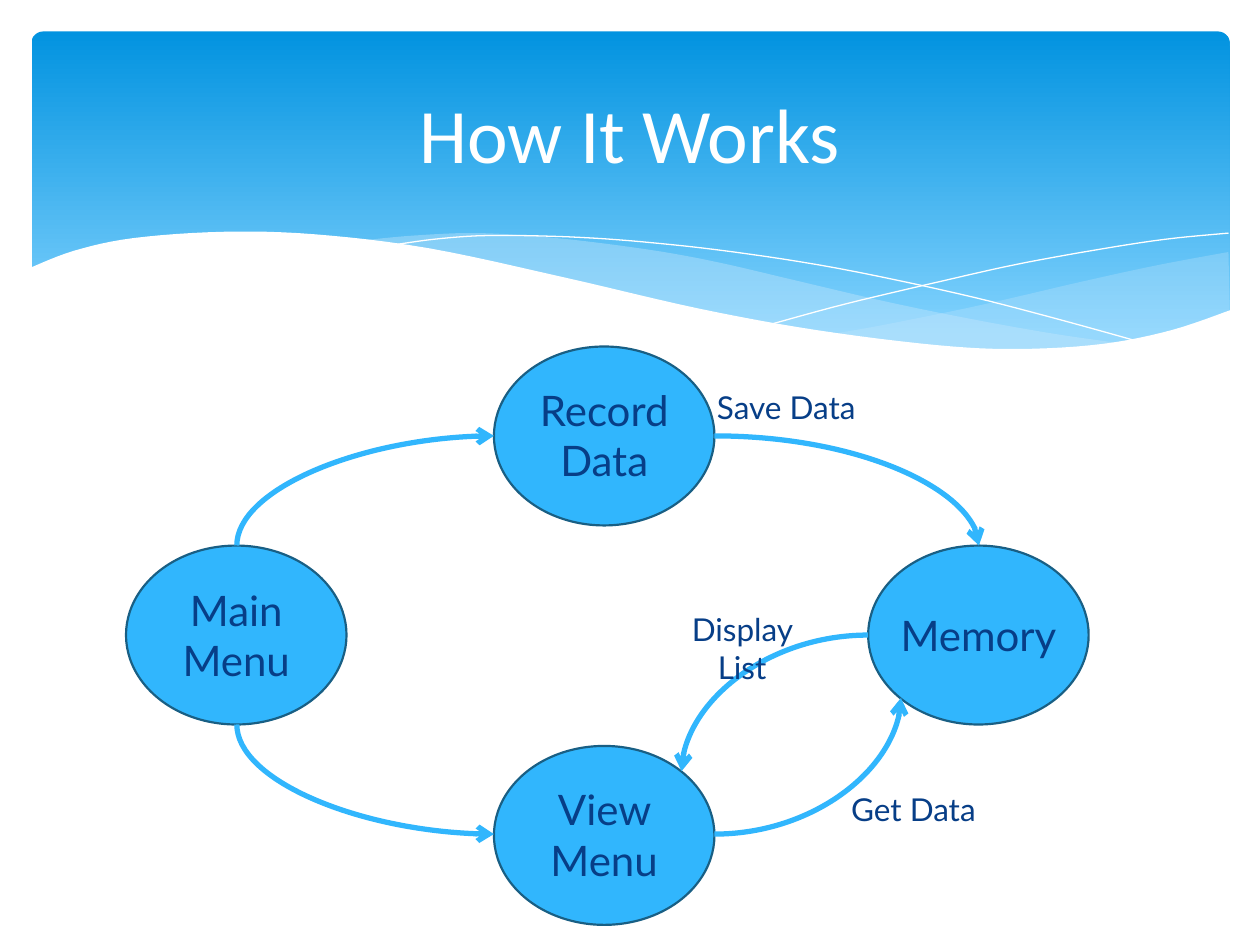
"""Build the "How It Works" slide: a wave banner above a four-node flow."""
from dataclasses import dataclass

from lxml import etree
from pptx import Presentation
from pptx.dml.color import RGBColor
from pptx.enum.shapes import MSO_CONNECTOR, MSO_SHAPE
from pptx.enum.text import MSO_ANCHOR, MSO_AUTO_SIZE, PP_ALIGN
from pptx.oxml.ns import qn
from pptx.util import Pt

PX = 9144
CURVE = MSO_CONNECTOR.CURVE
OVAL, ROUND_RECT = MSO_SHAPE.OVAL, MSO_SHAPE.ROUNDED_RECTANGLE
CENTER, TOP, MIDDLE = PP_ALIGN.CENTER, MSO_ANCHOR.TOP, MSO_ANCHOR.MIDDLE
GROW, FIXED = MSO_AUTO_SIZE.SHAPE_TO_FIT_TEXT, MSO_AUTO_SIZE.NONE


@dataclass(frozen=True)
class Theme:
    white: str = "FFFFFF"
    banner_top: str = "0293E0"
    banner_bottom: str = "83D3FE"
    wave: str = "C6E7FC"
    node: str = "31B6FD"
    node_line: str = "195F84"
    ink: str = "073E87"
    title_font: str = "Calibri"
    body_font: str = "Lato"
    title_size: int = 44
    node_size: int = 24
    label_size: int = 18


T = Theme()
SLIDE = (1000, 750)
BANNER = (25, 25, 951, 270)
TITLE = ("How It Works", (50, 37, 900, 137))

RIGHT_WAVE = [
    [(975, 200), (921, 210), (861, 223), (779, 242), (706, 257), (661, 265)],
    [(661, 265), (705, 271), (757, 276), (803, 278), (854, 276), (897, 270), (942, 259), (976, 247)],
]
LEFT_WAVE = [
    [(893, 273), (837, 265), (775, 254), (706, 240), (629, 222), (569, 208), (514, 198),
     (442, 189), (380, 185), (328, 187), (286, 191)],
    [(286, 191), (342, 199), (404, 211), (449, 222), (530, 240), (601, 255), (665, 266),
     (722, 274), (773, 277), (828, 278), (876, 275), (893, 273)],
]
FALLING_LINE = [[(309, 195), (344, 190), (387, 187), (450, 188), (510, 192), (582, 200),
                 (665, 213), (760, 233), (831, 251), (907, 272)]]
RISING_LINE = [[(613, 257), (672, 241), (748, 223), (806, 210), (866, 199), (924, 190), (975, 185)]]
FRONT_WAVE = [
    [(23, 213), (59, 199), (106, 189), (177, 184), (250, 186), (340, 197), (447, 220), (555, 245),
     (648, 262), (744, 274), (809, 277), (875, 273), (930, 262), (977, 246)],
    [(977, 329), (23, 329)],
]
WAVES = [
    (RIGHT_WAVE, dict(fill=T.wave, opacity=29)),
    (LEFT_WAVE, dict(fill=T.wave, opacity=40)),
    (FALLING_LINE, dict(line=T.white)),
    (RISING_LINE, dict(line=T.white)),
    (FRONT_WAVE, dict(fill=T.white)),
]

NODE_W, NODE_H = 175, 142
NODES = [
    ("Main Menu", (100, 433), (129, 459, 117, 91)),
    ("Memory", (689, 433), (692, 479, 169, 50)),
    ("Record Data", (392, 275), (415, 300, 129, 91)),
    ("View Menu", (392, 592), (421, 617, 117, 91)),
]
ARROWS = [
    ((188, 433), (392, 346), "vertical"),
    ((567, 346), (777, 433), "horizontal"),
    ((188, 575), (392, 662), "vertical"),
    ((689, 504), (541, 612), "horizontal"),
    ((567, 662), (715, 554), "horizontal"),
]
LABELS = [
    ("Get Data", (661, 622, 128, 40)),
    ("Display List", (517, 479, 144, 40)),
    ("Save Data", (555, 303, 138, 40)),
]


def emu(values):
    return [round(v * PX) for v in values]


def rgb(color):
    return RGBColor.from_string(color)


def smooth(knots, steps=6):
    """Return Catmull-Rom points through the knots."""
    k = [knots[0], *knots, knots[-1]]
    points = [knots[0]]
    for a, b, c, d in zip(k, k[1:], k[2:], k[3:]):
        for t in (i / steps for i in range(1, steps + 1)):
            points.append(tuple(
                (2 * q + (r - p) * t + (2 * p - 5 * q + 4 * r - s) * t ** 2
                 + (3 * q - p - 3 * r + s) * t ** 3) / 2
                for p, q, r, s in zip(a, b, c, d)))
    return points


def style(sp, fill=None, line=None, width=0, opacity=100):
    sp.shadow.inherit = False
    if fill:
        sp.fill.solid()
        sp.fill.fore_color.rgb = rgb(fill)
    else:
        sp.fill.background()
    if opacity < 100:
        color = sp._element.spPr.find(qn("a:solidFill")).find(qn("a:srgbClr"))
        etree.SubElement(color, qn("a:alpha"), val=str(opacity * 1000))
    if line:
        sp.line.color.rgb = rgb(line)
        sp.line.width = Pt(width)
    else:
        sp.line.fill.background()


def add_banner(s):
    sp = s.shapes.add_shape(ROUND_RECT, *emu(BANNER))
    style(sp)
    sp.adjustments[0] = 0.034
    sp.fill.gradient()
    sp.fill.gradient_angle = 270
    stops = zip(sp.fill.gradient_stops, [(0, T.banner_top), (0.9, T.banner_bottom)])
    for stop, (position, color) in stops:
        stop.position = position
        stop.color.rgb = rgb(color)


def add_wave(s, edges, **look):
    points = [emu(p) for edge in edges for p in smooth(edge)]
    fb = s.shapes.build_freeform(*points[0], scale=1.0)
    fb.add_line_segments(points[1:], close="fill" in look)
    style(fb.convert_to_shape(), **look)


def add_text(s, text, box, size, font=T.body_font, color=T.ink, anchor=TOP, fit=GROW):
    tf = s.shapes.add_textbox(*emu(box)).text_frame
    tf.word_wrap, tf.auto_size, tf.vertical_anchor = True, fit, anchor
    p = tf.paragraphs[0]
    p.alignment = CENTER
    r = p.add_run()
    r.text = text
    r.font.name, r.font.size, r.font.color.rgb = font, Pt(size), rgb(color)


def add_arrow(s, start, end, leaves):
    (x1, y1), (x2, y2) = start, end
    turn = 0
    if leaves == "vertical":
        cx, cy = (x1 + x2) / 2, (y1 + y2) / 2
        dx, dy = abs(y2 - y1) / 2, (y2 - y1) / abs(y2 - y1) * abs(x2 - x1) / 2
        turn = 90 if y2 < y1 else 270
        x1, x2 = cx + dx, cx - dx
        y1, y2 = (cy + dy, cy - dy) if turn == 270 and dy < 0 else (cy - dy, cy + dy)
    cxn = s.shapes.add_connector(CURVE, *emu((x1, y1, x2, y2)))
    cxn.line.color.rgb = rgb(T.node)
    cxn.line.width = Pt(3)
    sp_pr = cxn._element.spPr
    sp_pr.find(qn("a:prstGeom")).set("prst", "curvedConnector2")
    if turn:
        sp_pr.find(qn("a:xfrm")).set("rot", str(turn * 60000))
    etree.SubElement(sp_pr.find(qn("a:ln")), qn("a:tailEnd"), type="arrow")
    etree.SubElement(sp_pr, qn("a:effectLst"))


def main():
    prs = Presentation()
    prs.slide_width, prs.slide_height = emu(SLIDE)
    s = prs.slides.add_slide(prs.slide_layouts[6])
    add_banner(s)
    for edges, look in WAVES:
        add_wave(s, edges, **look)
    add_text(s, *TITLE, T.title_size, font=T.title_font, color=T.white, anchor=MIDDLE, fit=FIXED)
    for _, corner, _ in NODES:
        sp = s.shapes.add_shape(OVAL, *emu((*corner, NODE_W, NODE_H)))
        style(sp, fill=T.node, line=T.node_line, width=1.25)
    for arrow in ARROWS:
        add_arrow(s, *arrow)
    for text, _, box in NODES:
        add_text(s, text, box, T.node_size)
    for text, box in LABELS:
        add_text(s, text, box, T.label_size)
    prs.save("out.pptx")


if __name__ == "__main__":
    main()
